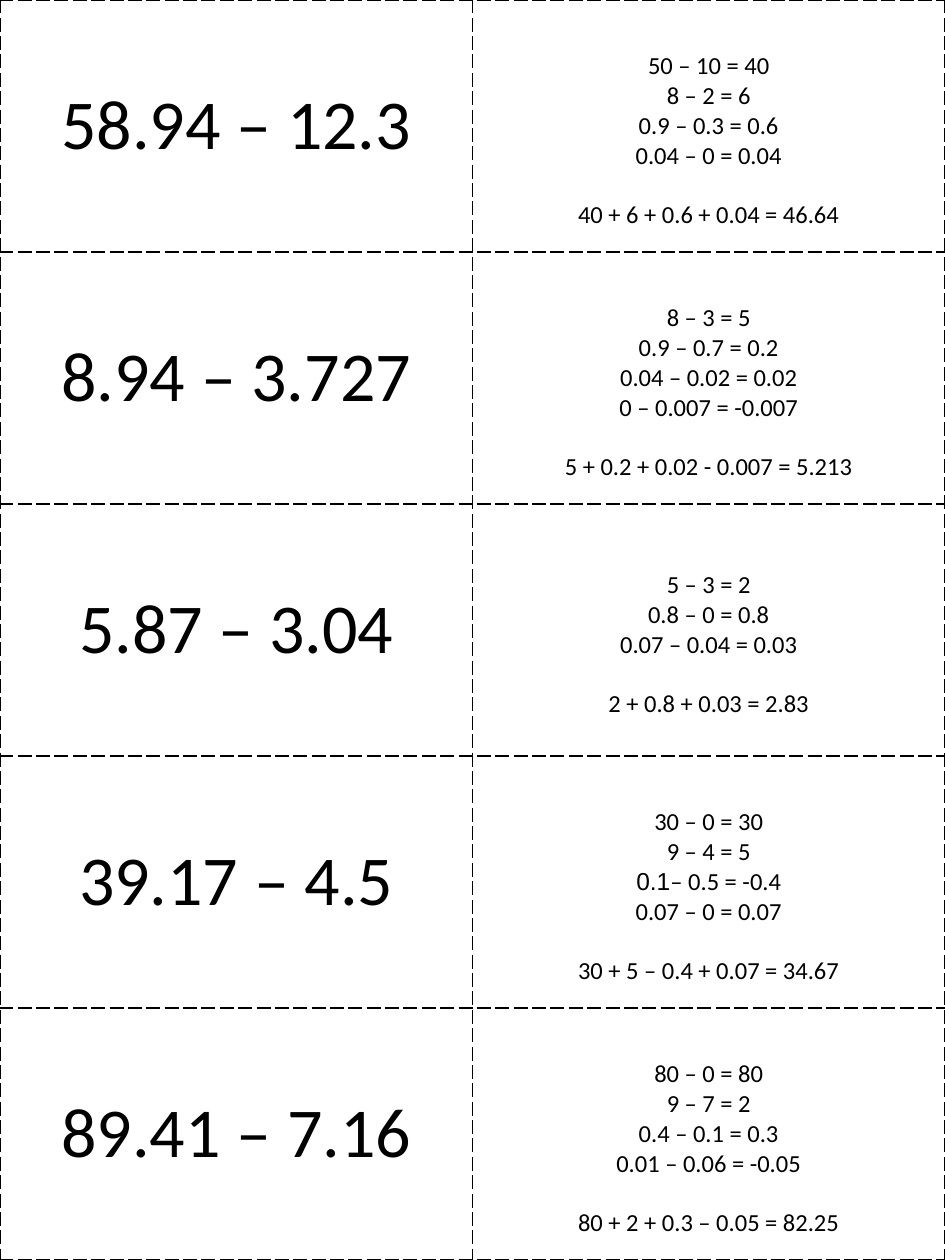
from lxml.etree import SubElement
from pptx import Presentation
from pptx.dml.color import RGBColor
from pptx.enum.text import MSO_ANCHOR, PP_ALIGN
from pptx.oxml.ns import qn
from pptx.util import Inches, Pt

# Each card: question, partial differences, recombined total.
# A step given as a tuple has its first part in the accent font.
CARDS = [
    ("58.94 – 12.3",
     ["50 – 10 = 40", "8 – 2 = 6", "0.9 – 0.3 = 0.6", "0.04 – 0 = 0.04"],
     "40 + 6 + 0.6 + 0.04 = 46.64"),
    ("8.94 – 3.727",
     ["8 – 3 = 5", "0.9 – 0.7 = 0.2", "0.04 – 0.02 = 0.02", "0 – 0.007 = -0.007"],
     "5 + 0.2 + 0.02 - 0.007 = 5.213"),
    ("5.87 – 3.04",
     ["5 – 3 = 2", "0.8 – 0 = 0.8", "0.07 – 0.04 = 0.03"],
     "2 + 0.8 + 0.03 = 2.83"),
    ("39.17 – 4.5",
     ["30 – 0 = 30", "9 – 4 = 5", ("0.1", "– 0.5 = -0.4"), "0.07 – 0 = 0.07"],
     "30 + 5 – 0.4 + 0.07 = 34.67"),
    ("89.41 – 7.16",
     ["80 – 0 = 80", "9 – 7 = 2", "0.4 – 0.1 = 0.3", "0.01 – 0.06 = -0.05"],
     "80 + 2 + 0.3 – 0.05 = 82.25"),
]
COLORS = {"ink": "000000"}
FONT, ACCENT_FONT = "Calibri", "Arial"
QUESTION_SIZE, STEP_SIZE = 40, 14
LINE_HEIGHT = Pt(17)  # one line of step text
WIDTH, HEIGHT = 7.5, 10


def add_dashed_borders(cell):
    properties = cell._tc.get_or_add_tcPr()
    for position, side in enumerate(("lnL", "lnR", "lnT", "lnB")):
        line = SubElement(properties, qn(f"a:{side}"), w=str(Pt(1)))
        properties.insert(position, line)  # borders come before the fill
        fill = SubElement(line, qn("a:solidFill"))
        SubElement(fill, qn("a:srgbClr"), val=COLORS["ink"])
        SubElement(line, qn("a:prstDash"), val="lgDash")


def fill_cell(cell, lines, size, top=0):
    """Write centred lines; return their paragraphs."""
    cell.fill.background()
    cell.vertical_anchor = MSO_ANCHOR.MIDDLE
    cell.margin_left = cell.margin_right = Inches(0.07)
    cell.margin_top, cell.margin_bottom = top, 0
    add_dashed_borders(cell)
    frame = cell.text_frame
    paragraphs = [frame.paragraphs[0]] + [frame.add_paragraph() for _ in lines[1:]]
    for paragraph, line in zip(paragraphs, lines):
        paragraph.alignment = PP_ALIGN.CENTER
        parts = (line,) if isinstance(line, str) else line
        fonts = (FONT,) if len(parts) == 1 else (ACCENT_FONT, FONT)
        for part, font in zip(parts, fonts):
            run = paragraph.add_run()
            run.text = part
            run.font.name = font
            run.font.size = Pt(size)
            run.font.color.rgb = RGBColor.from_string(COLORS["ink"])
    return paragraphs


def main():
    deck = Presentation()
    deck.slide_width, deck.slide_height = Inches(WIDTH), Inches(HEIGHT)
    slide = deck.slides.add_slide(deck.slide_layouts[6])
    cards = slide.shapes.add_table(
        len(CARDS), 2, 0, 0, Inches(WIDTH), Inches(HEIGHT)).table
    cards.first_row = cards.horz_banding = False
    for row, (question, steps, total) in enumerate(CARDS):
        fill_cell(cards.cell(row, 0), [question], QUESTION_SIZE)
        answer = fill_cell(cards.cell(row, 1), steps + [total], STEP_SIZE, LINE_HEIGHT)
        answer[-1].space_before = LINE_HEIGHT
    deck.save("out.pptx")


if __name__ == "__main__":
    main()
